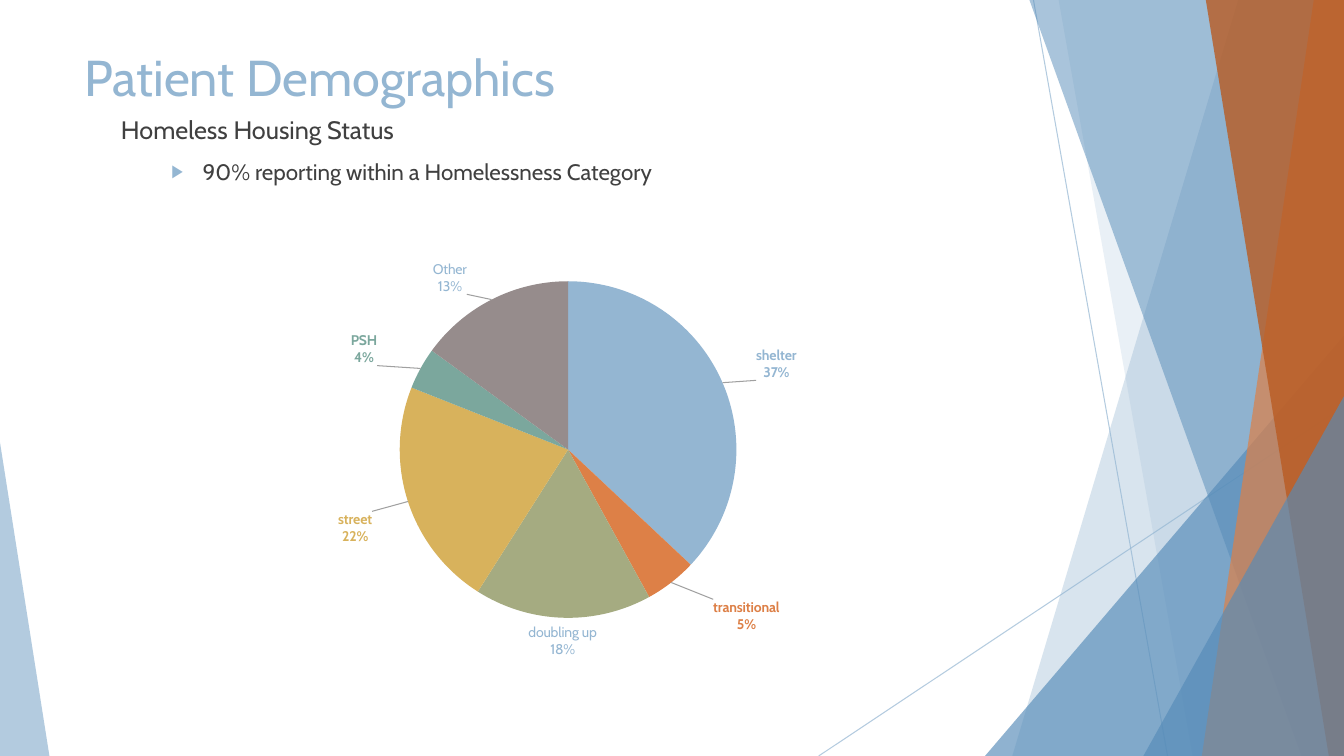
from dataclasses import dataclass

from lxml.etree import SubElement
from pptx import Presentation
from pptx.chart.data import CategoryChartData
from pptx.dml.color import RGBColor
from pptx.enum.chart import XL_CHART_TYPE as ChartType, XL_LABEL_POSITION as LabelPosition
from pptx.enum.shapes import MSO_CONNECTOR as Connector, MSO_SHAPE as Shape
from pptx.enum.text import MSO_ANCHOR as Anchor, MSO_AUTO_SIZE as AutoSize, PP_ALIGN as Align
from pptx.oxml import parse_xml
from pptx.oxml.ns import nsdecls, qn
from pptx.util import Inches, Pt


@dataclass(frozen=True)
class Theme:
    font: str = "Cabin"
    blue: str = "94B6D2"
    deep_blue: str = "558BB8"
    orange: str = "DD8047"
    rust: str = "B95B22"
    text: str = "404040"
    leader: str = "A0A0A0"
    title_size: int = 36
    heading_size: int = 18
    bullet_size: int = 16
    label_size: int = 10


THEME = Theme()
WIDTH, HEIGHT = 13.33, 7.5

TITLE = "Patient Demographics"
HEADING = "Homeless Housing Status"
BULLET = "90% reporting within a Homelessness Category"

# category, value, colour, label shift in inches, fixed label text
SLICES = [
    ("shelter", 37, THEME.blue, (0.28, 0), None),
    ("transitional", 5, THEME.orange, (0.38, 0.12), None),
    ("doubling up", 17, "A5AB81", None, ["doubling up", "18%"]),
    ("street", 22, "D8B25C", (-0.3, 0.08), None),
    ("PSH", 4, "7BA79D", (-0.38, 0), None),
    ("other", 15, "968C8C", (-0.22, 0), ["Other", "13%"]),
]
CHART_BOX = (1.6, 2.37, 8.11, 4.29)
PIE_BOX = (3.965, 2.79, 3.34, 3.34)

LINES = [((10.25, 0), (11.58, HEIGHT)), ((WIDTH, 4.03), (8.12, HEIGHT))]
DECORATION = [
    ("band", (12.28, 10.04), THEME.blue, 36),
    ("band", (10.5, 11.83), THEME.blue, 20),
    ("triangle", (9.77, 3.33, 3.56, 1), THEME.deep_blue, 66),
    ("band", (10.21, 12.91), THEME.deep_blue, 50),
    ("band", (13.03, 11.92), THEME.orange, 70),
    ("band", (11.96, 13.18), THEME.rust, 80),
    ("triangle", (11.34, 3.93, 1.99, 1), THEME.deep_blue, 66),
    ("triangle", (0, 4.39, 0.49, 0), THEME.blue, 70),
]


def inches(values):
    return [Inches(value) for value in values]


def paint(color_format, color, opacity):
    color_format.rgb = RGBColor.from_string(color)
    choice = color_format._xFill.find(qn("a:srgbClr"))
    SubElement(choice, qn("a:alpha"), val=str(opacity * 1000))


def style(font, size, color, bold=False):
    font.name = THEME.font
    font.size = Pt(size)
    font.bold = bold
    font.color.rgb = RGBColor.from_string(color)


def add_run(paragraph, text, size, color):
    run = paragraph.add_run()
    run.text = text
    style(run.font, size, color)


def add_decoration(slide):
    for start, end in LINES:
        line = slide.shapes.add_connector(Connector.STRAIGHT, *inches(start + end))
        line.line.width = Pt(0.75)
        line.line.fill.solid()
        paint(line.line.fill.fore_color, THEME.blue, 70)
        SubElement(line._element.spPr, qn("a:effectLst"))
    for kind, geometry, color, opacity in DECORATION:
        if kind == "band":
            top_x, bottom_x = geometry
            builder = slide.shapes.build_freeform(Inches(top_x), 0)
            corners = [(WIDTH, 0), (WIDTH, HEIGHT), (bottom_x, HEIGHT)]
            builder.add_line_segments([inches(corner) for corner in corners])
            shape = builder.convert_to_shape()
        else:
            left, top, width, apex = geometry
            box = inches((left, top, width, HEIGHT - top))
            shape = slide.shapes.add_shape(Shape.ISOSCELES_TRIANGLE, *box)
            shape.adjustments[0] = apex
        shape.shadow.inherit = False
        shape.line.fill.background()
        shape.fill.solid()
        paint(shape.fill.fore_color, color, opacity)


def place(placeholder, box):
    placeholder.left, placeholder.top, placeholder.width, placeholder.height = inches(box)
    frame = placeholder.text_frame
    frame.word_wrap = True
    frame.auto_size = AutoSize.NONE
    frame.vertical_anchor = Anchor.TOP
    return frame


def add_text(slide):
    title = place(slide.shapes.title, (0.74, 0.41, 9.4, 1.44)).paragraphs[0]
    title.alignment = Align.LEFT
    add_run(title, TITLE, THEME.title_size, THEME.blue)

    body = place(slide.placeholders[1], (1.1, 1.08, 10.94, 1.29))
    heading, bullet = body.paragraphs[0], body.add_paragraph()
    bullet.level = 1
    add_run(heading, HEADING, THEME.heading_size, THEME.text)
    add_run(bullet, BULLET, THEME.bullet_size, THEME.text)
    for paragraph, margin, indent in ((heading, 0, 0), (bullet, 0.81, -0.31)):
        paragraph.space_before = Pt(10)
        properties = paragraph._p.get_or_add_pPr()
        properties.set("marL", str(Inches(margin)))
        properties.set("indent", str(Inches(indent)))
    SubElement(heading._p.pPr, qn("a:buNone"))
    bullet_color = SubElement(bullet._p.pPr, qn("a:buClr"))
    SubElement(bullet_color, qn("a:srgbClr"), val=THEME.blue)
    SubElement(bullet._p.pPr, qn("a:buSzPct"), val="80000")
    SubElement(bullet._p.pPr, qn("a:buChar"), char="▶")


def layout_xml(mode, **fractions):
    modes = "".join(f'<c:{name}Mode val="edge"/>' for name in "xy") if mode == "inner" else ""
    target = '<c:layoutTarget val="inner"/>' if mode == "inner" else ""
    sizes = "".join(f'<c:{name} val="{value:.4f}"/>' for name, value in fractions.items())
    return parse_xml(
        f'<c:layout {nsdecls("c")}><c:manualLayout>{target}{modes}{sizes}'
        "</c:manualLayout></c:layout>"
    )


def add_label(point, color, shift, fixed_lines):
    label = point.data_label
    if fixed_lines:
        frame = label.text_frame
        for index, text in enumerate(fixed_lines):
            paragraph = frame.add_paragraph() if index else frame.paragraphs[0]
            add_run(paragraph, text, THEME.label_size, THEME.blue)
    else:
        style(label.font, THEME.label_size, color, bold=True)
    label.position = LabelPosition.OUTSIDE_END
    element = label._dLbl
    for name, value in (("showVal", "0"), ("showCatName", "1"), ("showPercent", "1")):
        element.find(qn(f"c:{name}")).set("val", value)
    SubElement(element, qn("c:separator")).text = "\n"
    if shift:
        x, y = shift[0] / CHART_BOX[2], shift[1] / CHART_BOX[3]
        for old in element.findall(qn("c:layout")):
            element.remove(old)
        element.insert(1, layout_xml("shift", x=x, y=y))


def add_pie(slide):
    data = CategoryChartData()
    data.categories = [entry[0] for entry in SLICES]
    data.add_series("Series 1", [entry[1] for entry in SLICES])
    chart = slide.shapes.add_chart(ChartType.PIE, *inches(CHART_BOX), data).chart
    chart.has_legend = False
    chart.has_title = False
    style(chart.font, THEME.label_size, "000000")

    left, top, width, height = CHART_BOX
    plot_area = chart._chartSpace.chart.plotArea
    for old in plot_area.findall(qn("c:layout")):
        plot_area.remove(old)
    plot_area.insert(0, layout_xml(
        "inner", x=(PIE_BOX[0] - left) / width, y=(PIE_BOX[1] - top) / height,
        w=PIE_BOX[2] / width, h=PIE_BOX[3] / height))

    plot = chart.plots[0]
    plot.vary_by_categories = True
    series = plot.series[0]
    labels = series.data_labels
    labels.show_value = False
    labels.show_category_name = True
    labels.show_percentage = True
    labels.position = LabelPosition.OUTSIDE_END
    for index, (_, _, color, shift, fixed_lines) in enumerate(SLICES):
        point = series.points[index]
        point.format.fill.solid()
        point.format.fill.fore_color.rgb = RGBColor.from_string(color)
        point.format.line.fill.background()
        add_label(point, color, shift, fixed_lines)
    element = labels._element
    if element.find(qn("c:showLeaderLines")) is None:
        SubElement(element, qn("c:showLeaderLines"))
    element.find(qn("c:showLeaderLines")).set("val", "1")
    element.append(parse_xml(
        f'<c:leaderLines {nsdecls("c", "a")}><c:spPr><a:ln w="9525"><a:solidFill>'
        f'<a:srgbClr val="{THEME.leader}"/></a:solidFill></a:ln></c:spPr></c:leaderLines>'))


def main():
    presentation = Presentation()
    presentation.slide_width, presentation.slide_height = inches((WIDTH, HEIGHT))
    slide = presentation.slides.add_slide(presentation.slide_layouts[1])
    add_decoration(slide)
    add_text(slide)
    add_pie(slide)
    presentation.save("out.pptx")


if __name__ == "__main__":
    main()
